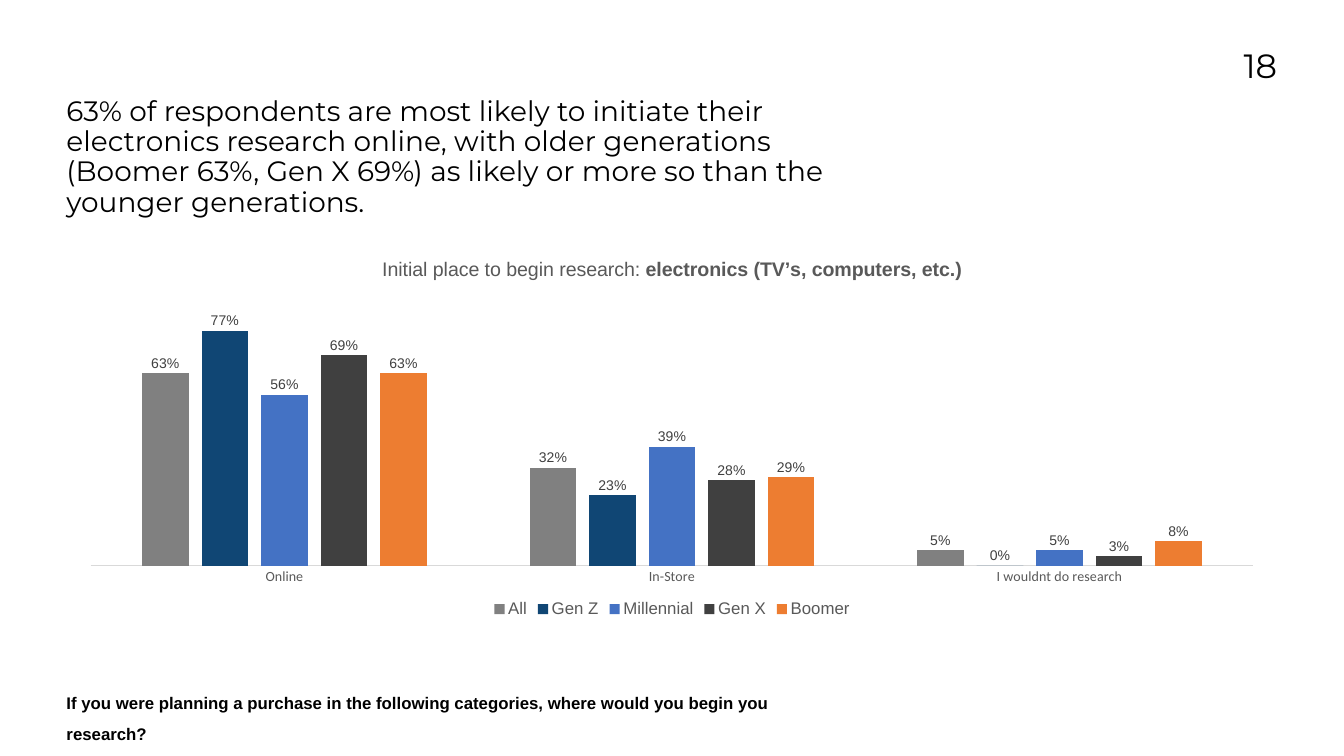
from lxml.etree import SubElement
from pptx import Presentation
from pptx.chart.data import CategoryChartData
from pptx.dml.color import RGBColor
from pptx.enum.chart import (XL_CHART_TYPE, XL_LABEL_POSITION,
                             XL_LEGEND_POSITION, XL_TICK_MARK)
from pptx.enum.text import MSO_ANCHOR, MSO_AUTO_SIZE, PP_ALIGN
from pptx.oxml import parse_xml
from pptx.oxml.ns import nsdecls, qn
from pptx.util import Cm, Pt

LEFT = 3.35
GREY = "595959"
PLACES = ["Online", "In-Store", "I wouldnt do research"]
GROUPS = [
    ("All", "808080", (0.63, 0.32, 0.05)),
    ("Gen Z", "104674", (0.77, 0.23, 0)),
    ("Millennial", "4472C4", (0.56, 0.39, 0.05)),
    ("Gen X", "404040", (0.69, 0.28, 0.03)),
    ("Boomer", "ED7D31", (0.63, 0.29, 0.08)),
]


def color(code):
    return RGBColor.from_string(code)


def style(font, size, face="Arial", code="000000", bold=False):
    font.size, font.name, font.bold = Pt(size), face, bold
    font.color.rgb = color(code)


def write(shape, box, text, align=PP_ALIGN.LEFT, space=1.0, **look):
    """Place a text shape in a box and fill it with one plain paragraph."""
    shape.left, shape.top, shape.width, shape.height = map(Cm, box)
    frame = shape.text_frame
    frame.word_wrap = True
    frame.auto_size = MSO_AUTO_SIZE.NONE
    frame.vertical_anchor = MSO_ANCHOR.TOP
    frame.margin_left = frame.margin_right = 0
    frame.margin_top = frame.margin_bottom = 0
    para = frame.paragraphs[0]
    para.alignment, para.line_spacing = align, space
    para.space_before = Pt(0)
    props = para._p.get_or_add_pPr()
    props.set("marL", "0")
    props.set("indent", "0")
    SubElement(props, qn("a:buNone"))
    run = para.add_run()
    run.text = text
    style(run.font, **look)


def set_plot(chart, **parts):
    """Fix the inner plot area, in fractions of the chart."""
    area = chart.element.find(".//" + qn("c:plotArea"))
    for old in area.findall(qn("c:layout")):
        area.remove(old)
    sizes = "".join(f'<c:{k} val="{v}"/>' for k, v in parts.items())
    area.insert(0, parse_xml(
        f'<c:layout {nsdecls("c")}><c:manualLayout>'
        '<c:layoutTarget val="inner"/><c:xMode val="edge"/>'
        f'<c:yMode val="edge"/>{sizes}</c:manualLayout></c:layout>'))


def add_bars(slide, box):
    data = CategoryChartData(number_format="0%")
    data.categories = PLACES
    for name, _, values in GROUPS:
        data.add_series(name, values)
    chart = slide.shapes.add_chart(
        XL_CHART_TYPE.COLUMN_CLUSTERED, *map(Cm, box), data).chart
    style(chart.font, 10, "Calibri")

    para = chart.chart_title.text_frame.paragraphs[0]
    for text, bold in (("Initial place to begin research: ", False),
                       ("electronics (TV’s, computers, etc.)", True)):
        run = para.add_run()
        run.text = text
        style(run.font, 28, code=GREY, bold=bold)
    chart.chart_title.include_in_layout = False

    chart.has_legend = True
    chart.legend.position = XL_LEGEND_POSITION.BOTTOM
    chart.legend.include_in_layout = False
    style(chart.legend.font, 24, code=GREY)

    base = chart.category_axis
    base.major_tick_mark = base.minor_tick_mark = XL_TICK_MARK.NONE
    base.format.line.color.rgb = color("D9D9D9")
    base.format.line.width = Pt(0.75)
    style(base.tick_labels.font, 20, "Calibri", GREY)
    scale = chart.value_axis
    scale.minimum_scale, scale.maximum_scale = 0, 0.9
    scale.has_major_gridlines = False
    scale.visible = False

    plot = chart.plots[0]
    plot.vary_by_categories = False
    plot.gap_width, plot.overlap = 219, -27
    for bars, (_, code, _) in zip(plot.series, GROUPS):
        bars.format.fill.solid()
        bars.format.fill.fore_color.rgb = color(code)
        labels = bars.data_labels
        labels.show_value = True
        labels.position = XL_LABEL_POSITION.OUTSIDE_END
        labels.number_format = "0%"
        labels.number_format_is_linked = False
        style(labels.font, 20, code="404040")
    set_plot(chart, x=0.02, y=0.12, w=0.96, h=0.73)


def main():
    deck = Presentation()
    deck.slide_width, deck.slide_height = Cm(67.74), Cm(38.1)
    slide = deck.slides.add_slide(deck.slide_layouts[1])
    write(slide.shapes.title, (LEFT, 4.9, 40.67, 5.28),
          "63% of respondents are most likely to initiate their electronics "
          "research online, with older generations (Boomer 63%, Gen X 69%) "
          "as likely or more so than the younger generations.",
          space=0.9, size=40, face="Montserrat")
    write(slide.placeholders[1], (LEFT, 34.42, 36.88, 1.65),
          "If you were planning a purchase in the following categories, "
          "where would you begin you research?",
          space=1.5, size=24, bold=True)
    page = (58.65, 2.24, 5.72, 4.17)
    write(slide.shapes.add_textbox(*map(Cm, page)), page, "18",
          align=PP_ALIGN.RIGHT, size=48, face="Montserrat")
    add_bars(slide, (LEFT, 12.4, 61.04, 18.95))
    deck.save("out.pptx")


if __name__ == "__main__":
    main()
